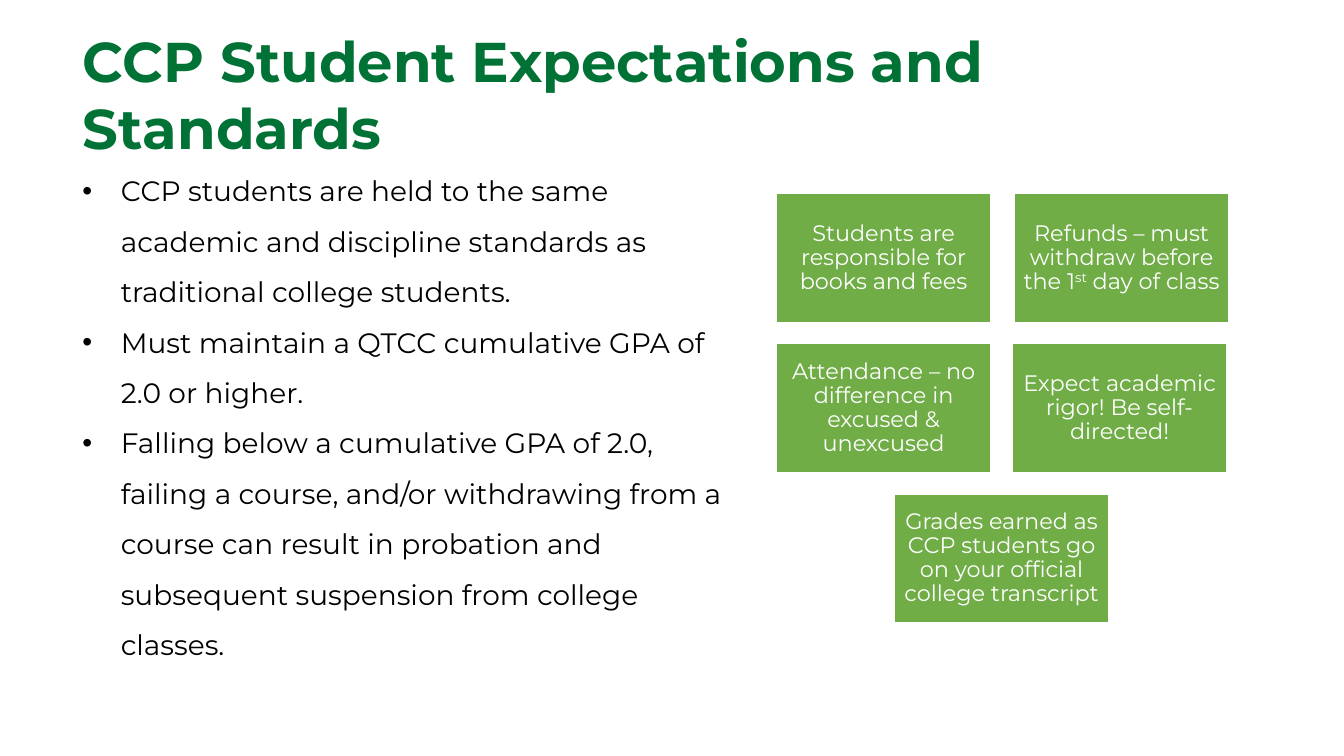
from dataclasses import dataclass
from typing import Any

from lxml.etree import SubElement
from pptx import Presentation
from pptx.dml.color import RGBColor
from pptx.enum.shapes import MSO_SHAPE as Shape
from pptx.enum.text import MSO_ANCHOR as Anchor, MSO_AUTO_SIZE as AutoSize, PP_ALIGN as Align
from pptx.oxml.ns import qn
from pptx.util import Inches, Pt

GREEN, CARD_GREEN, WHITE, BLACK = "007235", "70AD47", "FFFFFF", "000000"
FONT = "Montserrat"
CARD_WIDTH, CARD_HEIGHT = 2.13, 1.28
FIRST_ROW, ROW_PITCH = 1.92, 1.49
BULLET_INDENT = 0.38


@dataclass(frozen=True)
class Card:
    left: float
    row: int
    text: str
    superscript: str = ""
    rest: str = ""


EXPECTATIONS = [
    "CCP students are held to the same academic and discipline standards as "
    "traditional college students.",
    "Must maintain a QTCC cumulative GPA of 2.0 or higher.",
    "Falling below a cumulative GPA of 2.0, failing a course, and/or withdrawing "
    "from a course can result in probation and subsequent suspension from college classes.",
]

CARDS = [
    Card(7.7, 0, "Students are responsible for books and fees"),
    Card(10.06, 0, "Refunds – must withdraw before the 1", "st", " day of class"),
    Card(7.7, 1, "Attendance – no difference in excused & unexcused"),
    Card(10.04, 1, "Expect academic rigor! Be self-directed!"),
    Card(8.87, 2, "Grades earned as CCP students go on your official college transcript"),
]


def rgb(hex_color: str) -> RGBColor:
    return RGBColor.from_string(hex_color)


def apply_format(target: Any, values: dict[str, Any]) -> None:
    for name, value in values.items():
        setattr(target, name, value)


def add_run(paragraph: Any, text: str, size: float, color: str, bold: bool = False) -> Any:
    run = paragraph.add_run()
    run.text = text
    apply_format(run.font, {"name": FONT, "size": Pt(size), "bold": bold})
    run.font.color.rgb = rgb(color)
    return run


def add_bullet(paragraph: Any) -> None:
    properties = paragraph._p.get_or_add_pPr()
    properties.set("marL", str(Inches(BULLET_INDENT)))
    properties.set("indent", str(-Inches(BULLET_INDENT)))
    SubElement(properties, qn("a:buFont")).set("typeface", "Arial")
    SubElement(properties, qn("a:buChar")).set("char", "•")


def add_title(slide: Any, text: str) -> None:
    title = slide.shapes.title
    apply_format(title, {"left": Inches(0.72), "top": Inches(0.36),
                         "width": Inches(11.89), "height": Inches(1.14)})
    apply_format(title.text_frame, {"word_wrap": True, "auto_size": AutoSize.NONE,
                                    "vertical_anchor": Anchor.MIDDLE})
    heading = title.text_frame.paragraphs[0]
    heading.alignment = Align.LEFT
    add_run(heading, text, 40, GREEN, bold=True)


def add_expectations(slide: Any, expectations: list[str]) -> None:
    box = slide.shapes.add_textbox(Inches(0.72), Inches(1.51), Inches(6.7), Inches(5.07))
    frame = box.text_frame
    apply_format(frame, {"word_wrap": True, "auto_size": AutoSize.SHAPE_TO_FIT_TEXT})
    for index, expectation in enumerate(expectations):
        paragraph = frame.add_paragraph() if index else frame.paragraphs[0]
        paragraph.line_spacing = 1.5
        add_bullet(paragraph)
        add_run(paragraph, expectation, 20, BLACK)


def add_card(slide: Any, card: Card) -> None:
    box = slide.shapes.add_shape(
        Shape.RECTANGLE, Inches(card.left), Inches(FIRST_ROW + card.row * ROW_PITCH),
        Inches(CARD_WIDTH), Inches(CARD_HEIGHT))
    box.shadow.inherit = False
    box.fill.solid()
    box.fill.fore_color.rgb = rgb(CARD_GREEN)
    box.line.color.rgb = rgb(WHITE)
    box.line.width = Pt(1)

    margins = {f"margin_{side}": Inches(0.07) for side in ("left", "top", "right", "bottom")}
    apply_format(box.text_frame, {"word_wrap": True, "vertical_anchor": Anchor.MIDDLE, **margins})
    paragraph = box.text_frame.paragraphs[0]
    apply_format(paragraph, {"alignment": Align.CENTER, "line_spacing": 0.9})
    add_run(paragraph, card.text, 16, WHITE)
    if card.superscript:
        raised = add_run(paragraph, card.superscript, 16, WHITE)
        raised._r.get_or_add_rPr().set("baseline", "30000")
        add_run(paragraph, card.rest, 16, WHITE)


def main() -> None:
    deck = Presentation()
    apply_format(deck, {"slide_width": Inches(13.33), "slide_height": Inches(7.5)})
    slide = deck.slides.add_slide(deck.slide_layouts.get_by_name("Title Only"))

    # Title and bulleted standards
    add_title(slide, "CCP Student Expectations and Standards")
    add_expectations(slide, EXPECTATIONS)

    # Cards on the right
    for card in CARDS:
        add_card(slide, card)

    deck.save("out.pptx")


if __name__ == "__main__":
    main()
